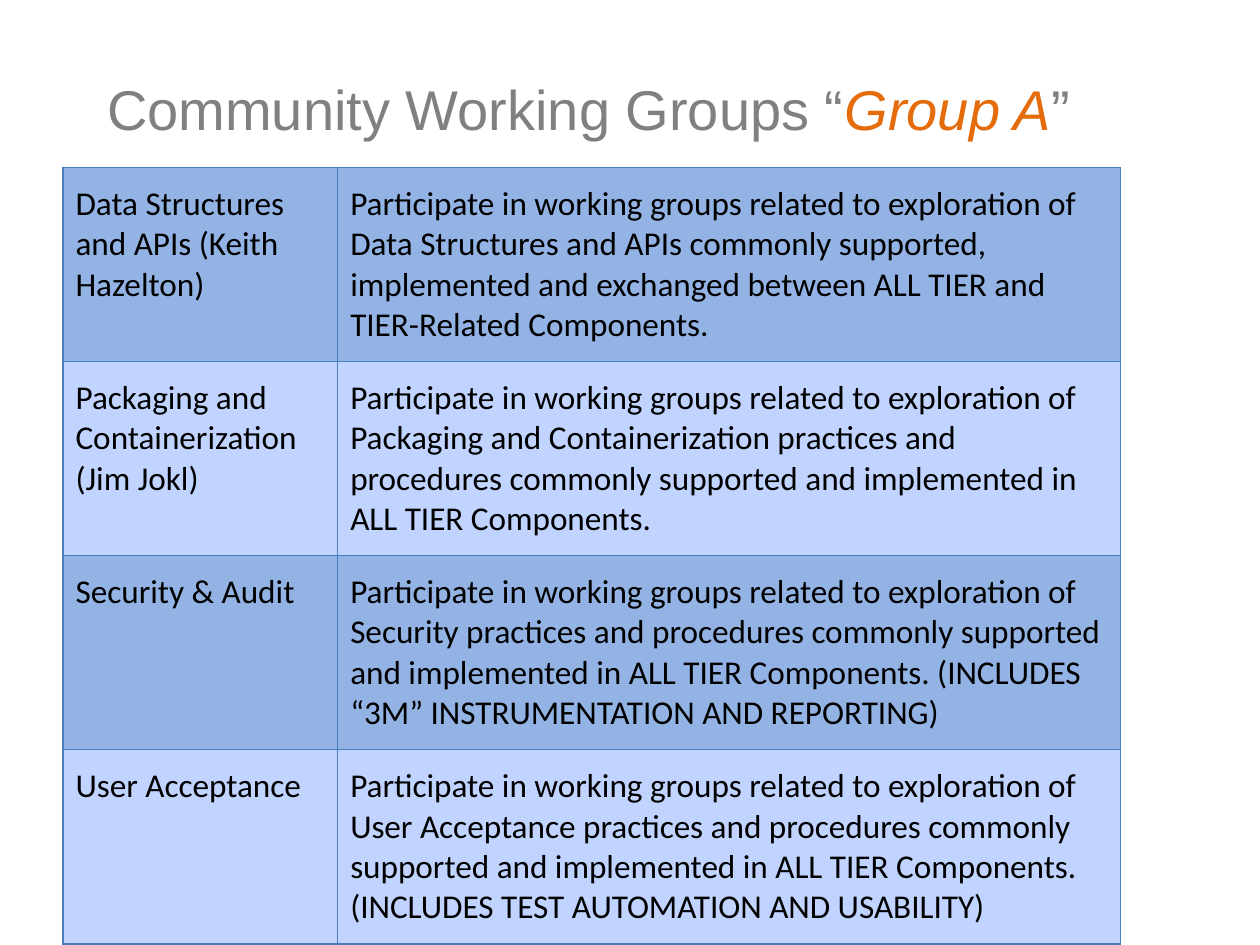
import pptx
from lxml import etree
from pptx.dml.color import RGBColor
from pptx.enum.text import MSO_ANCHOR, PP_ALIGN
from pptx.oxml.ns import qn
from pptx.util import Inches, Pt

GRAY = RGBColor(0x80, 0x80, 0x80)
ORANGE = RGBColor(0xE4, 0x6C, 0x0A)
BLACK = RGBColor(0, 0, 0)
BAND_FILLS = (RGBColor(0x93, 0xB3, 0xE5), RGBColor(0xC0, 0xD4, 0xFF))
BORDER = "4B7EBC"

HEADING = [
    ("Community Working Groups “", GRAY, False),
    ("Group A", ORANGE, True),
    ("”", GRAY, False),
]
LEAD = "Participate in working groups related to exploration of "
GROUPS = [
    ("Data Structures and APIs (Keith Hazelton)",
     "Data Structures and APIs commonly supported, implemented and exchanged "
     "between ALL TIER and TIER-Related Components."),
    ("Packaging and Containerization (Jim Jokl)",
     "Packaging and Containerization practices and procedures commonly "
     "supported and implemented in ALL TIER Components."),
    ("Security & Audit",
     "Security practices and procedures commonly supported and implemented in "
     "ALL TIER Components. (INCLUDES “3M” INSTRUMENTATION AND REPORTING)"),
    ("User Acceptance",
     "User Acceptance practices and procedures commonly supported and implemented "
     "in ALL TIER Components. (INCLUDES TEST AUTOMATION AND USABILITY)"),
]
COLUMN_WIDTHS = (2.18, 6.21)
TABLE_HEIGHT = 6.13


def add_borders(cell):
    properties = cell._tc.get_or_add_tcPr()
    for position, side in enumerate(("lnL", "lnR", "lnT", "lnB")):
        line = etree.Element(qn(f"a:{side}"), w=str(Pt(0.75)))
        fill = etree.SubElement(line, qn("a:solidFill"))
        etree.SubElement(fill, qn("a:srgbClr"), val=BORDER)
        properties.insert(position, line)


def fill_cell(cell, text, color):
    cell.text = text
    cell.margin_left = cell.margin_right = Inches(0.1)
    cell.margin_top = cell.margin_bottom = Inches(0.13)
    cell.fill.solid()
    cell.fill.fore_color.rgb = color
    font = cell.text_frame.paragraphs[0].font
    font.name, font.size, font.bold = "Calibri", Pt(19), False
    font.color.rgb = BLACK
    add_borders(cell)


def add_heading(slide):
    title = slide.shapes.title
    title.left, title.top = Inches(0.75), Inches(0.5)
    title.width, title.height = Inches(8.08), Inches(0.8)
    frame = title.text_frame
    frame.vertical_anchor = MSO_ANCHOR.MIDDLE
    frame.margin_bottom = Inches(0.14)
    paragraph = frame.paragraphs[0]
    paragraph.alignment = PP_ALIGN.LEFT
    for text, color, italic in HEADING:
        run = paragraph.add_run()
        run.text = text
        run.font.name, run.font.size = "Arial", Pt(32)
        run.font.italic = italic
        run.font.color.rgb = color


def add_groups(slide):
    table = slide.shapes.add_table(
        len(GROUPS), len(COLUMN_WIDTHS), Inches(0.5), Inches(1.33),
        Inches(sum(COLUMN_WIDTHS)), Inches(TABLE_HEIGHT)).table
    table.first_row = False
    for column, width in zip(table.columns, COLUMN_WIDTHS):
        column.width = Inches(width)
    for index, (group, scope) in enumerate(GROUPS):
        color = BAND_FILLS[index % 2]
        fill_cell(table.cell(index, 0), group, color)
        fill_cell(table.cell(index, 1), LEAD + scope, color)


def main():
    deck = pptx.Presentation()
    deck.slide_width, deck.slide_height = Inches(10), Inches(7.5)
    slide = deck.slides.add_slide(deck.slide_layouts.get_by_name("Title Only"))
    add_heading(slide)
    add_groups(slide)
    deck.save("out.pptx")


if __name__ == "__main__":
    main()
